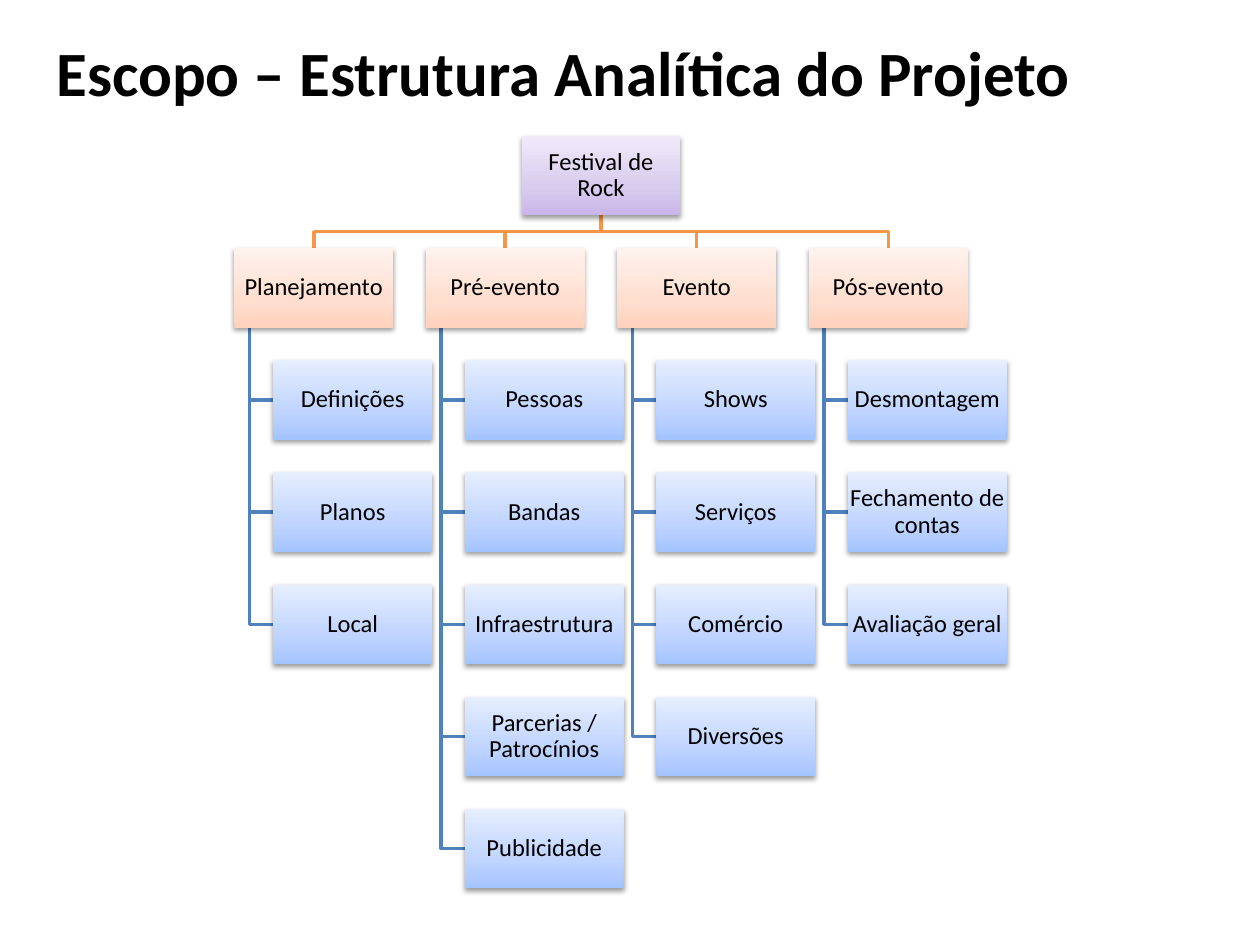
from pptx import Presentation
from pptx.dml.color import RGBColor
from pptx.enum.shapes import MSO_SHAPE
from pptx.enum.text import MSO_ANCHOR, PP_ALIGN
from pptx.oxml import parse_xml
from pptx.oxml.ns import nsdecls
from pptx.util import Inches, Pt

RECTANGLE = MSO_SHAPE.RECTANGLE
MIDDLE = MSO_ANCHOR.MIDDLE
LEFT, CENTER = PP_ALIGN.LEFT, PP_ALIGN.CENTER

COLORS = {"text": "000000", "phase_line": "F79646", "task_line": "4F81BD"}
# Gradient stops from bottom to top, at 0, 35 and 100 percent
GRADIENTS = {
    "project": ("C9B5E8", "D8CBEE", "F0EAF9"),
    "phase": ("FFD2BD", "FFDED0", "FFF2ED"),
    "task": ("A4C4FF", "BFD4FF", "E6EEFF"),
}
STOPS = (0, 35, 100)

# Grid of the chart, in inches
BOX_W, BOX_H, GAP = 1.26, 0.63, 0.26
COLUMN_STEP, ROW_STEP = BOX_W + GAP, BOX_H + GAP
CHART_LEFT, CHART_TOP = 1.86, 1.08
TRUNK_INDENT, TASK_INDENT = 0.12, 0.31

PROJECT = "Festival de Rock"
PHASES = {
    "Planejamento": ["Definições", "Planos", "Local"],
    "Pré-evento": ["Pessoas", "Bandas", "Infraestrutura",
                   "Parcerias / Patrocínios", "Publicidade"],
    "Evento": ["Shows", "Serviços", "Comércio", "Diversões"],
    "Pós-evento": ["Desmontagem", "Fechamento de contas", "Avaliação geral"],
}


def write_text(frame, text, size=14, bold=False, align=CENTER, spacing=None):
    frame.word_wrap = True
    frame.vertical_anchor = MIDDLE
    para = frame.paragraphs[0]
    para.alignment = align
    para.line_spacing = spacing
    span = para.add_run()
    span.text = text
    span.font.name = "Calibri"
    span.font.size = Pt(size)
    span.font.bold = bold
    span.font.color.rgb = RGBColor.from_string(COLORS["text"])


class Page:
    """Adds styled elements to one slide."""

    def __init__(self, deck):
        self.shapes = deck.slides.add_slide(deck.slide_layouts[6]).shapes

    def title(self, text, left, top, width, height):
        box = self.shapes.add_textbox(*map(Inches, (left, top, width, height)))
        write_text(box.text_frame, text, size=36, bold=True, align=LEFT)

    def branch(self, points, color):
        corners = [(Inches(x), Inches(y)) for x, y in points]
        builder = self.shapes.build_freeform(*corners[0])
        builder.add_line_segments(corners[1:], close=False)
        line = builder.convert_to_shape()
        line.shadow.inherit = False
        line.fill.background()
        line.line.color.rgb = RGBColor.from_string(COLORS[color])
        line.line.width = Pt(2)

    def box(self, text, left, top, level):
        box = self.shapes.add_shape(
            RECTANGLE, *map(Inches, (left, top, BOX_W, BOX_H)))
        box.line.fill.background()
        self.shade(box, GRADIENTS[level])
        frame = box.text_frame
        frame.margin_left = frame.margin_right = Inches(0.01)
        frame.margin_top = frame.margin_bottom = Inches(0.01)
        write_text(frame, text, spacing=0.9)

    def shade(self, box, colors):
        # Three-stop gradient and soft shadow below the box
        stops = "".join(
            f'<a:gs pos="{stop * 1000}"><a:srgbClr val="{color}"/></a:gs>'
            for stop, color in zip(STOPS, colors))
        box.fill.background()
        properties = box._element.spPr
        empty_fill = properties.find("{*}noFill")
        properties.replace(empty_fill, parse_xml(
            f'<a:gradFill {nsdecls("a")} rotWithShape="1"><a:gsLst>{stops}'
            '</a:gsLst><a:lin ang="16200000" scaled="0"/></a:gradFill>'))
        box.shadow.inherit = False
        properties.find("{*}effectLst").append(parse_xml(
            f'<a:outerShdw {nsdecls("a")} blurRad="{Pt(3.1)}" '
            f'dist="{Pt(1.6)}" dir="5400000" rotWithShape="0">'
            '<a:srgbClr val="000000"><a:alpha val="38000"/></a:srgbClr>'
            '</a:outerShdw>'))


def main():
    deck = Presentation()
    deck.slide_width, deck.slide_height = Inches(10), Inches(7.5)
    page = Page(deck)
    page.title("Escopo – Estrutura Analítica do Projeto", 0.35, 0.21, 9.15, 0.71)

    project_left = CHART_LEFT + (len(PHASES) - 1) * COLUMN_STEP / 2
    project_middle = project_left + BOX_W / 2
    project_bottom = CHART_TOP + BOX_H
    phase_top = CHART_TOP + ROW_STEP
    fork = project_bottom + GAP / 2
    columns = [(CHART_LEFT + index * COLUMN_STEP, phase, tasks)
               for index, (phase, tasks) in enumerate(PHASES.items())]

    # Branches, behind the boxes
    for left, phase, tasks in columns:
        middle = left + BOX_W / 2
        page.branch([(project_middle, project_bottom), (project_middle, fork),
                     (middle, fork), (middle, phase_top)], "phase_line")
        trunk = left + TRUNK_INDENT
        for row in range(1, len(tasks) + 1):
            task_middle = phase_top + row * ROW_STEP + BOX_H / 2
            page.branch([(trunk, phase_top + BOX_H), (trunk, task_middle),
                         (left + TASK_INDENT, task_middle)], "task_line")

    # Project, phases and their tasks
    page.box(PROJECT, project_left, CHART_TOP, "project")
    for left, phase, tasks in columns:
        page.box(phase, left, phase_top, "phase")
        for row, task in enumerate(tasks, start=1):
            page.box(task, left + TASK_INDENT, phase_top + row * ROW_STEP, "task")

    deck.save("out.pptx")


if __name__ == "__main__":
    main()
